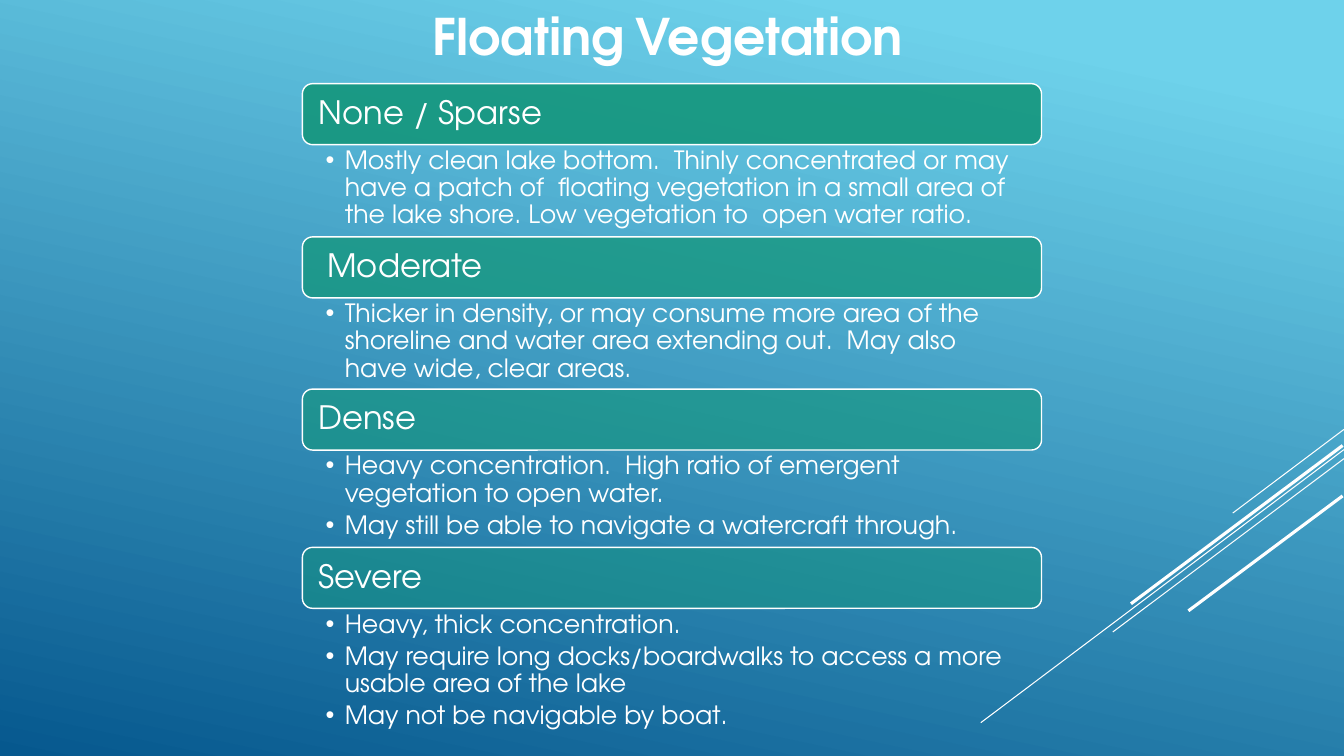
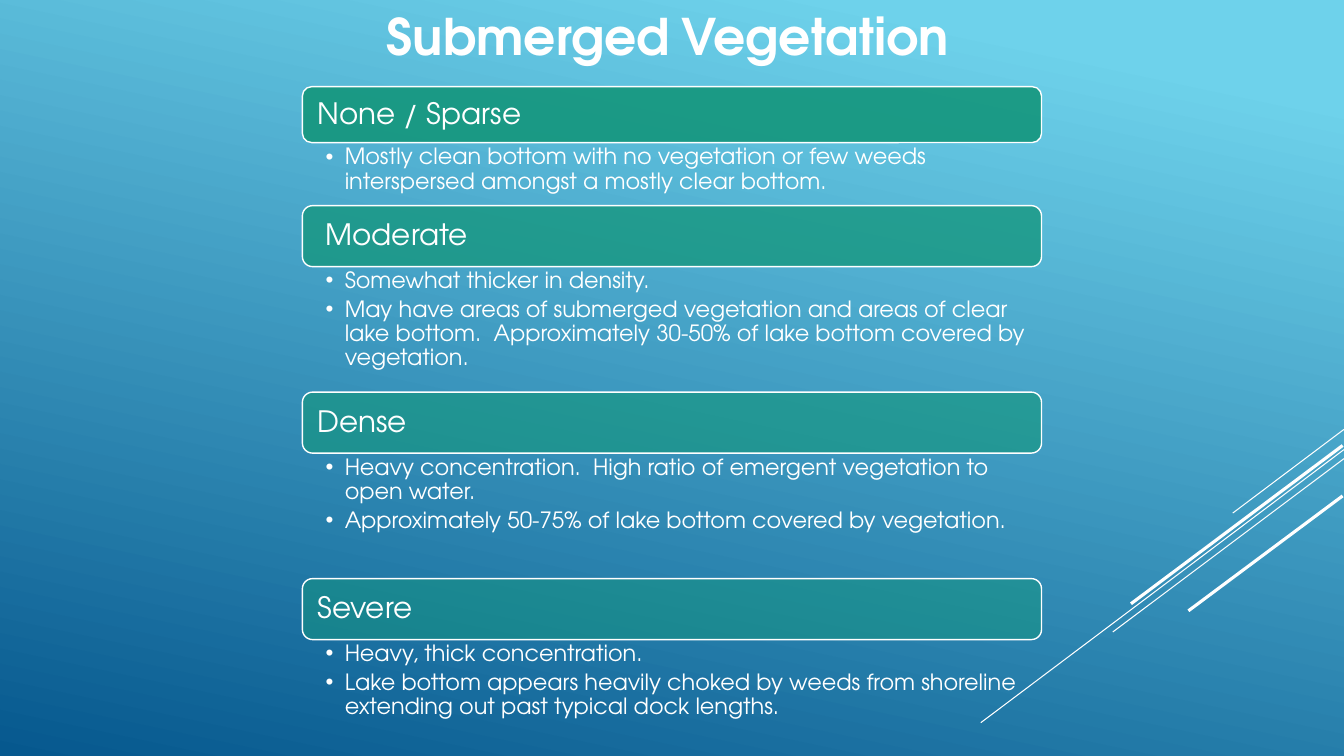
import dataclasses
import typing

import lxml.etree
import pptx
import pptx.dml.color
import pptx.enum.shapes
import pptx.enum.text
import pptx.oxml.ns
import pptx.presentation
import pptx.shapes.base
import pptx.slide
import pptx.text.text
import pptx.util

WHITE = pptx.dml.color.RGBColor(0xFF, 0xFF, 0xFF)
TEAL = pptx.dml.color.RGBColor(0x14, 0x96, 0x7C)
SKY = pptx.dml.color.RGBColor(0x6E, 0xD2, 0xEB)
DEEP_BLUE = pptx.dml.color.RGBColor(0x06, 0x58, 0x8E)
FONT = "TeX Gyre Adventor"

# Grid of 40 columns and 75 rows
SLIDE_WIDTH = pptx.util.Inches(13.333)
SLIDE_HEIGHT = pptx.util.Inches(7.5)
COLUMN = SLIDE_WIDTH / 40
ROW = SLIDE_HEIGHT / 75
STACK_LEFT, STACK_COLUMNS = 9, 22
INDENT = pptx.util.Inches(0.19)
TOP = pptx.enum.text.MSO_ANCHOR.TOP
MIDDLE = pptx.enum.text.MSO_ANCHOR.MIDDLE
COMPARISON_LAYOUT = 4  # a title and four body placeholders


@dataclasses.dataclass(frozen=True)
class Streak:
    """A diagonal line, in columns and rows."""
    start: tuple[float, float]
    end: tuple[float, float]
    points: float = 0.75


@dataclasses.dataclass(frozen=True)
class Section:
    """A heading bar and the list below it, in rows."""
    heading: str
    top: float
    items: tuple[str, ...]
    bar_rows: float = 6.05


@dataclasses.dataclass(frozen=True)
class Topic:
    title: str
    sections: tuple[Section, ...]
    bottom: float
    heading_size: int
    item_size: int
    bar_inset: float
    right_inset: float


STREAKS = (
    Streak((40, 42.6), (36.69, 50.9)),
    Streak((40, 44.6), (29.19, 71.7)),
    Streak((40, 45.5), (33.12, 62.7)),
    Streak((39.96, 44.2), (33.66, 59.9), 2.25),
    Streak((39.96, 49.2), (35.37, 60.6), 2.25),
)

TOPICS = (
    Topic("Floating", (
        Section("None / Sparse", 8.3, (
            "Mostly clean lake bottom.  Thinly concentrated or may have a patch of  floating "
            "vegetation in a small area of the lake shore. Low vegetation to  open water ratio.",)),
        Section(" Moderate", 23.5, (
            "Thicker in density, or may consume more area of the shoreline and water area "
            "extending out.  May also have wide, clear areas.",)),
        Section("Dense", 38.6, (
            "Heavy concentration.  High ratio of emergent vegetation to open water.",
            "May still be able to navigate a watercraft through.")),
        Section("Severe", 54.3, (
            "Heavy, thick concentration.",
            "May require long docks/boardwalks to access a more usable area of the lake",
            "May not be navigable by boat.")),
    ), bottom=73.3, heading_size=23, item_size=18, bar_inset=0.13, right_inset=0.18),
    Topic("Submerged", (
        Section("None / Sparse", 8.6, (
            "Mostly clean bottom with no vegetation or few weeds interspersed amongst a mostly "
            "clear bottom.",), bar_rows=5.55),
        Section(" Moderate", 20.4, (
            "Somewhat thicker in density.",
            "May have areas of submerged vegetation and areas of clear lake bottom.  "
            "Approximately 30-50% of lake bottom covered by vegetation.")),
        Section("Dense", 38.9, (
            "Heavy concentration.  High ratio of emergent vegetation to open water.",
            "Approximately 50-75% of lake bottom covered by vegetation.")),
        Section("Severe", 57.4, (
            "Heavy, thick concentration.",
            "Lake bottom appears heavily choked by weeds from shoreline extending out past "
            "typical dock lengths.")),
    ), bottom=73.1, heading_size=21, item_size=16, bar_inset=0.12, right_inset=0.16),
)


def apply_format(target: typing.Any, values: dict[str, typing.Any]) -> None:
    for name, value in values.items():
        setattr(target, name, value)


def box(left: float, top: float, columns: float, rows: float) -> dict[str, int]:
    return {"left": round(left * COLUMN), "top": round(top * ROW),
            "width": round(columns * COLUMN), "height": round(rows * ROW)}


def format_frame(frame: pptx.text.text.TextFrame, anchor: typing.Any,
                 left: float, right: float, vertical: float) -> None:
    apply_format(frame, {
        "word_wrap": True, "auto_size": pptx.enum.text.MSO_AUTO_SIZE.NONE,
        "vertical_anchor": anchor,
        "margin_left": pptx.util.Inches(left), "margin_right": pptx.util.Inches(right),
        "margin_top": pptx.util.Inches(vertical), "margin_bottom": pptx.util.Inches(vertical)})


def add_run(paragraph: typing.Any, text: str, size: float, bold: bool = False) -> None:
    run = paragraph.add_run()
    run.text = text
    apply_format(run.font, {"name": FONT, "size": pptx.util.Pt(size), "bold": bold})
    run.font.color.rgb = WHITE


# Shared background and streaks
def set_background(presentation: pptx.presentation.Presentation) -> None:
    fill = presentation.slide_master.background.fill
    fill.gradient()
    fill.gradient_angle = 258
    for stop, color, position in zip(fill.gradient_stops, (SKY, DEEP_BLUE), (0.1, 1)):
        stop.color.rgb = color
        stop.position = position


def add_streaks(slide: pptx.slide.Slide) -> None:
    """Draw the streaks and move them to the layout, which all slides share."""
    for streak in STREAKS:
        (x1, y1), (x2, y2) = streak.start, streak.end
        connector = slide.shapes.add_connector(
            pptx.enum.shapes.MSO_CONNECTOR.STRAIGHT,
            round(x1 * COLUMN), round(y1 * ROW), round(x2 * COLUMN), round(y2 * ROW))
        connector.line.color.rgb = WHITE
        connector.line.width = pptx.util.Pt(streak.points)
        lxml.etree.SubElement(connector._element.spPr, pptx.oxml.ns.qn("a:effectLst"))
        slide.slide_layout.shapes._spTree.append(connector._element)


# Slide parts
def fill_title(slide: pptx.slide.Slide, first_word: str) -> None:
    title = slide.shapes.title
    apply_format(title, box(8, 0, 23.75, 7.1))
    format_frame(title.text_frame, TOP, 0.1, 0.1, 0.05)
    paragraph = title.text_frame.paragraphs[0]
    paragraph.alignment = pptx.enum.text.PP_ALIGN.CENTER
    for text, size in ((first_word, 36), (" ", 28), ("Vegetation", 36)):
        add_run(paragraph, text, size, bold=True)


def add_bar(slide: pptx.slide.Slide, section: Section, topic: Topic, opacity: float) -> None:
    place = box(STACK_LEFT, section.top, STACK_COLUMNS, section.bar_rows)
    bar = slide.shapes.add_shape(pptx.enum.shapes.MSO_SHAPE.ROUNDED_RECTANGLE, *place.values())
    bar.shadow.inherit = False
    bar.fill.solid()
    bar.fill.fore_color.rgb = TEAL
    color = bar._element.spPr.find(".//" + pptx.oxml.ns.qn("a:srgbClr"))
    alpha = lxml.etree.SubElement(color, pptx.oxml.ns.qn("a:alpha"))
    alpha.set("val", str(round(opacity * 1000)))
    bar.line.color.rgb = WHITE
    bar.line.width = pptx.util.Pt(1)
    format_frame(bar.text_frame, MIDDLE, topic.bar_inset, topic.bar_inset, 0.1)
    paragraph = bar.text_frame.paragraphs[0]
    apply_format(paragraph, {"alignment": pptx.enum.text.PP_ALIGN.LEFT, "line_spacing": 0.9})
    add_run(paragraph, section.heading, topic.heading_size)


def fill_list(body: pptx.shapes.base.BaseShape, section: Section, topic: Topic,
              bottom: float) -> None:
    top = section.top + section.bar_rows
    apply_format(body, box(STACK_LEFT, top, STACK_COLUMNS, bottom - top))
    frame = body.text_frame
    format_frame(frame, TOP, 0.23, topic.right_inset, 0.03)
    for index, item in enumerate(section.items):
        paragraph = frame.add_paragraph() if index else frame.paragraphs[0]
        properties = paragraph._p.get_or_add_pPr()
        properties.set("marL", str(INDENT))
        properties.set("indent", str(-INDENT))
        bullet = lxml.etree.SubElement(properties, pptx.oxml.ns.qn("a:buChar"))
        bullet.set("char", "•")
        apply_format(paragraph, {
            "level": 1, "alignment": pptx.enum.text.PP_ALIGN.LEFT, "line_spacing": 0.9,
            "space_before": pptx.util.Pt(0), "space_after": pptx.util.Pt(topic.item_size * 0.2)})
        add_run(paragraph, item, topic.item_size)


def fill_slide(slide: pptx.slide.Slide, topic: Topic) -> None:
    fill_title(slide, topic.title)
    bodies = list(slide.placeholders)[1:]
    bottoms = [section.top for section in topic.sections[1:]] + [topic.bottom]
    for index, (section, body, bottom) in enumerate(zip(topic.sections, bodies, bottoms)):
        add_bar(slide, section, topic, opacity=90 - index * 40 / 3)
        fill_list(body, section, topic, bottom)


def main() -> None:
    presentation = pptx.Presentation()
    apply_format(presentation, {"slide_width": SLIDE_WIDTH, "slide_height": SLIDE_HEIGHT})
    set_background(presentation)
    layout = presentation.slide_layouts[COMPARISON_LAYOUT]
    slides = [presentation.slides.add_slide(layout) for _ in TOPICS]
    add_streaks(slides[0])
    for slide, topic in zip(slides, TOPICS):
        fill_slide(slide, topic)
    presentation.save("out.pptx")


if __name__ == "__main__":
    main()
